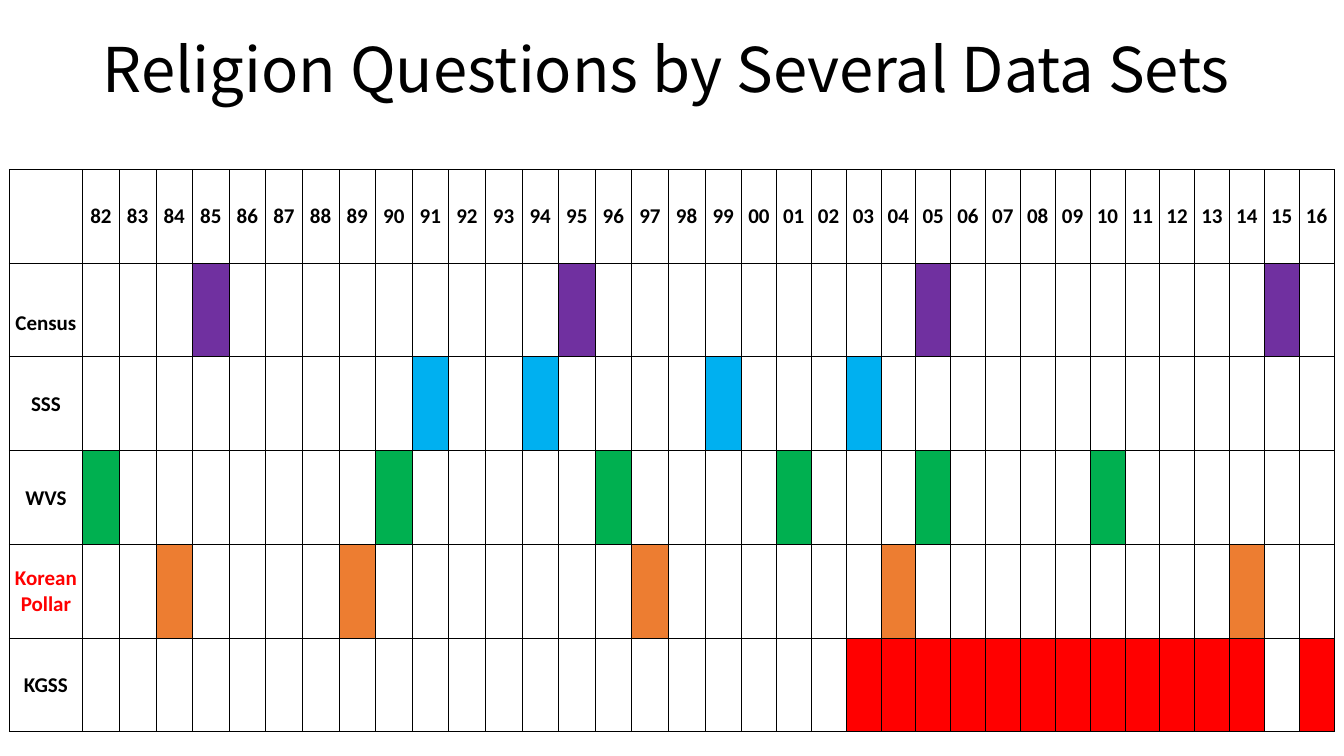
from lxml import etree
from pptx import Presentation
from pptx import util as u
from pptx.dml.color import RGBColor
from pptx.enum import text
from pptx.oxml.ns import qn

TITLE = "Religion Questions by Several Data Sets"
BLACK, RED = "000000", "FF0000"
FIRST, LAST = 1982, 2016

# name lines, name colour, fill colour, years asked, top inset
SETS = [
    (["Census"], BLACK, "7030A0", [1985, 1995, 2005, 2015], 0.26),
    (["SSS"], BLACK, "00B0F0", [1991, 1994, 1999, 2003], 0.01),
    (["WVS"], BLACK, "00B050", [1982, 1990, 1996, 2001, 2005, 2010], 0.01),
    (["Korean", "Pollar"], RED, "ED7D31", [1984, 1989, 1997, 2004, 2014], 0.01),
    (["KGSS"], BLACK, RED, [*range(2003, 2015), 2016], 0.01),
]

# Grid in inches: a name column, wide columns to 1999, slim ones after
LEFT, TOP, ROW = 0.09, 1.68, 0.93
YEARS = range(FIRST, LAST + 1)
COLS = [0.73] + [6.54 / 18 if y < 2000 else 5.88 / 17 for y in YEARS]


def rgb(code):
    return RGBColor.from_string(code)


def write(frame, lines, size, font, color, align, bold=False):
    for i, line in enumerate(lines):
        para = frame.paragraphs[0] if i == 0 else frame.add_paragraph()
        para.alignment = align
        run = para.add_run()
        run.text = line
        run.font.size, run.font.name = u.Pt(size), font
        run.font.bold = bold
        run.font.color.rgb = rgb(color)


def label(cell, lines, color=BLACK, top=0.01):
    cell.margin_top = u.Inches(top)
    write(cell.text_frame, lines, 15, "Calibri", color,
          text.PP_ALIGN.CENTER, True)


def style(cell, color):
    cell.margin_left = cell.margin_right = u.Inches(0.01)
    cell.margin_bottom = 0
    cell.vertical_anchor = text.MSO_ANCHOR.MIDDLE
    props = cell._tc.get_or_add_tcPr()
    for side in ("lnL", "lnR", "lnT", "lnB"):
        line = etree.SubElement(props, qn("a:" + side), w=str(u.Pt(0.5)))
        solid = etree.SubElement(line, qn("a:solidFill"))
        etree.SubElement(solid, qn("a:srgbClr"), val=BLACK)
    if color:
        cell.fill.solid()
        cell.fill.fore_color.rgb = rgb(color)
    else:
        cell.fill.background()


def main():
    deck = Presentation()
    deck.slide_width, deck.slide_height = u.Inches(13.33), u.Inches(7.5)
    slide = deck.slides.add_slide(deck.slide_layouts[6])

    # Title
    box = slide.shapes.add_textbox(*map(u.Inches, (0.92, 0.15, 11.5, 1.14)))
    frame = box.text_frame
    frame.word_wrap = True
    frame.vertical_anchor = text.MSO_ANCHOR.MIDDLE
    write(frame, [TITLE], 44, "Noto Sans CJK KR", BLACK, text.PP_ALIGN.LEFT)
    frame.paragraphs[0].line_spacing = 0.9

    # Table frame
    rows = len(SETS) + 1
    table = slide.shapes.add_table(
        rows, len(COLS), u.Inches(LEFT), u.Inches(TOP),
        u.Inches(sum(COLS)), u.Inches(ROW * rows)).table
    table.first_row = table.horz_banding = False
    for col, width in zip(table.columns, COLS):
        col.width = u.Inches(width)
    for row in table.rows:
        row.height = u.Inches(ROW)

    # Year heads
    style(table.cell(0, 0), None)
    for c, year in enumerate(YEARS, 1):
        style(table.cell(0, c), None)
        label(table.cell(0, c), [f"{year % 100:02d}"])

    # One row per data set
    for r, (name, ink, fill, asked, top) in enumerate(SETS, 1):
        style(table.cell(r, 0), None)
        label(table.cell(r, 0), name, ink, top)
        for c, year in enumerate(YEARS, 1):
            style(table.cell(r, c), fill if year in asked else None)

    deck.save("out.pptx")


if __name__ == "__main__":
    main()
